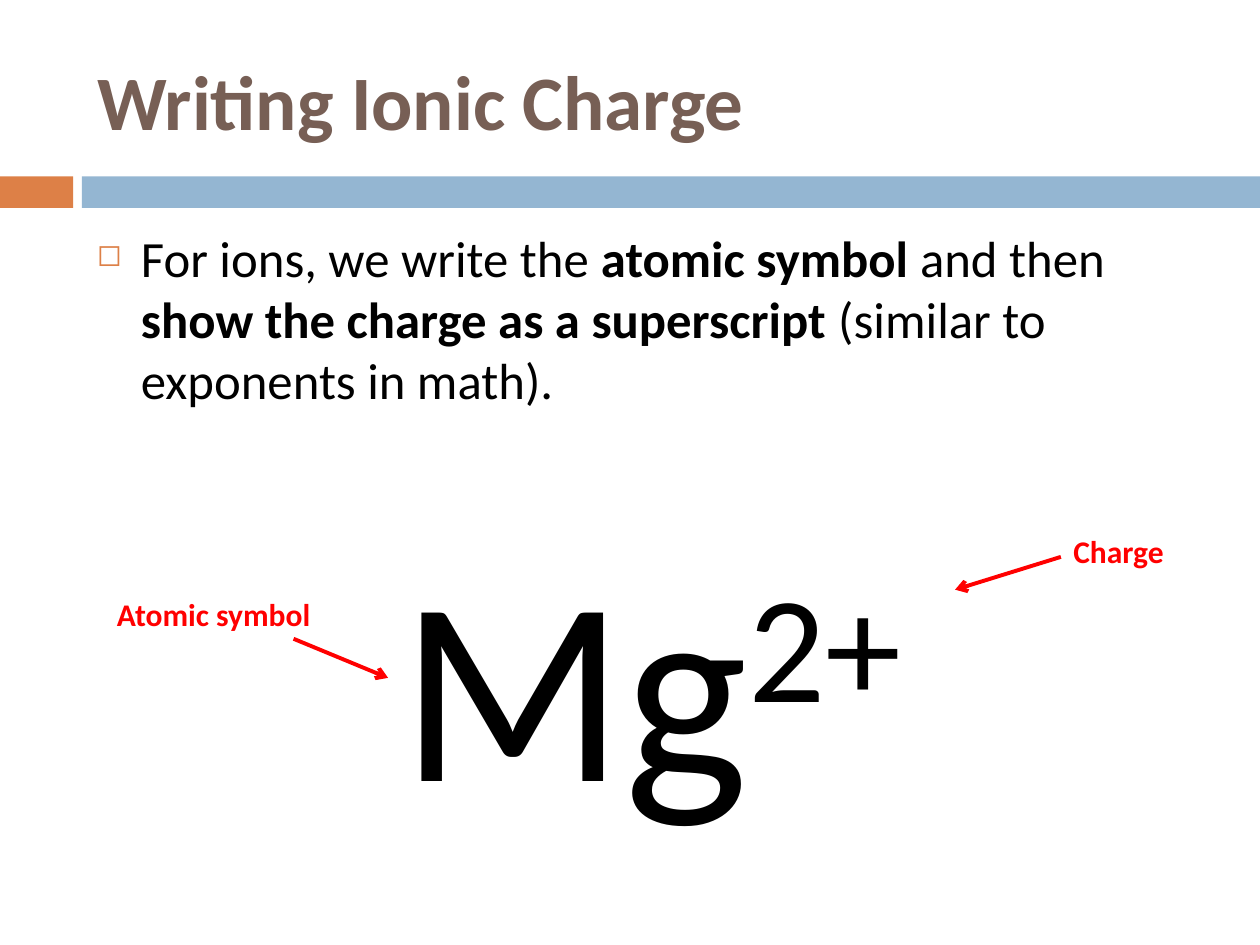
"""Build a slide explaining how ionic charge is written."""
from dataclasses import dataclass

from lxml.etree import SubElement
from pptx import Presentation
from pptx.dml.color import RGBColor
from pptx.enum.shapes import MSO_CONNECTOR, MSO_SHAPE
from pptx.enum.text import MSO_ANCHOR, PP_ALIGN
from pptx.oxml.ns import qn
from pptx.util import Inches, Pt

COLORS = {
    "title": "775F55",
    "text": "000000",
    "label": "FF0000",
    "accent": "DD8047",
    "band": "94B6D2",
}
FONT = "Calibri"


@dataclass(frozen=True)
class Area:
    left: float
    top: float
    width: float
    height: float

    def lengths(self) -> tuple:
        return tuple(Inches(n) for n in (self.left, self.top, self.width, self.height))


@dataclass(frozen=True)
class Span:
    text: str
    bold: bool = False
    baseline: int = 0


@dataclass(frozen=True)
class TextBlock:
    area: Area
    spans: tuple[Span, ...]
    size: float
    color: str


@dataclass(frozen=True)
class Bar:
    area: Area
    color: str


@dataclass(frozen=True)
class Arrow:
    start: tuple[float, float]
    end: tuple[float, float]


TITLE = TextBlock(Area(0.67, 0.25, 8.92, 1.08), (Span("Writing Ionic Charge", True),), 44, "title")
EXPLANATION = TextBlock(
    Area(0.67, 1.75, 8.92, 4.92),
    (
        Span("For ions, we write the "),
        Span("atomic symbol ", True),
        Span("and then "),
        Span("show the charge as a superscript ", True),
        Span("(similar to exponents in math)."),
    ),
    29,
    "text",
)
ION = TextBlock(Area(3.08, 4.07, 4.75, 2.63), (Span("Mg"), Span("2+", baseline=30000)), 150, "text")
LABELS = (
    TextBlock(Area(0.83, 4.67, 1.83, 0.4), (Span("Atomic symbol", True),), 18, "label"),
    TextBlock(Area(8.42, 4.17, 0.95, 0.4), (Span("Charge", True),), 18, "label"),
)
BARS = (
    Bar(Area(0, 1.4, 0.58, 0.25), "accent"),
    Bar(Area(0.65, 1.4, 9.35, 0.25), "band"),
)
ARROWS = (
    Arrow((2.33, 5.07), (3.08, 5.38)),
    Arrow((8.42, 4.42), (7.58, 4.68)),
)


def rgb(name: str) -> RGBColor:
    return RGBColor.from_string(COLORS[name])


def draw_bar(page, bar: Bar) -> None:
    shape = page.shapes.add_shape(MSO_SHAPE.RECTANGLE, *bar.area.lengths())
    shape.shadow.inherit = False
    shape.fill.solid()
    shape.fill.fore_color.rgb = rgb(bar.color)
    shape.line.fill.background()


def write_text(box, block: TextBlock):
    box.text_frame.word_wrap = True
    paragraph = box.text_frame.paragraphs[0]
    paragraph.alignment = PP_ALIGN.LEFT
    for span in block.spans:
        run = paragraph.add_run()
        run.text = span.text
        run.font.name = FONT
        run.font.size = Pt(block.size)
        run.font.bold = span.bold
        run.font.color.rgb = rgb(block.color)
        if span.baseline:
            run.font._element.set("baseline", str(span.baseline))
    return paragraph


def draw_title(page, block: TextBlock) -> None:
    title = page.shapes.title
    title.left, title.top, title.width, title.height = block.area.lengths()
    title.text_frame.vertical_anchor = MSO_ANCHOR.MIDDLE
    write_text(title, block)


def draw_text(page, block: TextBlock):
    return write_text(page.shapes.add_textbox(*block.area.lengths()), block)


def add_bullet(paragraph) -> None:
    paragraph.space_before = Pt(7)
    properties = paragraph._p.get_or_add_pPr()
    properties.set("marL", str(Inches(0.35)))
    properties.set("indent", str(Inches(-0.35)))
    color = SubElement(properties, qn("a:buClr"))
    SubElement(color, qn("a:srgbClr"), val=COLORS["accent"])
    SubElement(properties, qn("a:buSzPct"), val="60000")
    SubElement(properties, qn("a:buChar"), char="◻")


def draw_arrow(page, arrow: Arrow) -> None:
    points = (Inches(n) for n in arrow.start + arrow.end)
    connector = page.shapes.add_connector(MSO_CONNECTOR.STRAIGHT, *points)
    connector.line.color.rgb = rgb("label")
    connector.line.width = Pt(2.25)
    SubElement(connector.line._get_or_add_ln(), qn("a:tailEnd"), type="arrow")
    SubElement(connector._element.spPr, qn("a:effectLst"))


def main() -> None:
    deck = Presentation()
    deck.slide_width, deck.slide_height = Inches(10), Inches(7.5)
    page = deck.slides.add_slide(deck.slide_layouts[5])
    for bar in BARS:
        draw_bar(page, bar)
    draw_title(page, TITLE)
    add_bullet(draw_text(page, EXPLANATION))
    for block in (ION, *LABELS):
        draw_text(page, block)
    for arrow in ARROWS:
        draw_arrow(page, arrow)
    deck.save("out.pptx")


if __name__ == "__main__":
    main()
